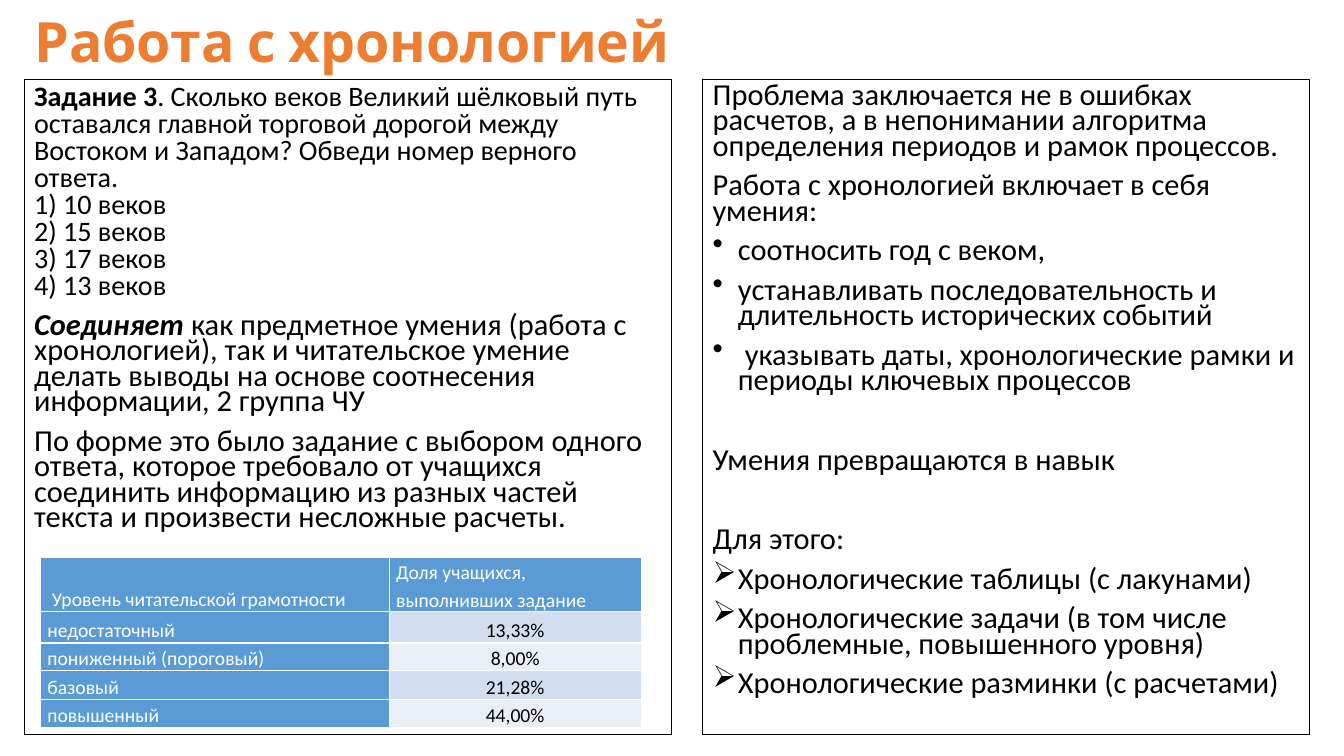
from lxml.etree import SubElement
from pptx import Presentation
from pptx.dml.color import RGBColor
from pptx.enum.text import MSO_ANCHOR, MSO_AUTO_SIZE, PP_ALIGN
from pptx.oxml.ns import qn
from pptx.util import Inches, Pt


def style(font, size, color="000000", name="Calibri", bold=False):
    font.name, font.size, font.bold = name, Pt(size), bold
    font.color.rgb = RGBColor.from_string(color)


def panel(slide, left, width, items):
    """Add a framed column; an item is (text, lead, mark, size, spacing, before)."""
    box = slide.shapes.add_textbox(Inches(left), Inches(0.79), Inches(width), Inches(6.5))
    box.line.color.rgb = RGBColor.from_string("000000")
    box.line.width = Pt(1)
    frame = box.text_frame
    frame.word_wrap = True
    for i, (text, lead, mark, size, spacing, before) in enumerate(items):
        para = frame.add_paragraph() if i else frame.paragraphs[0]
        para.line_spacing, para.space_before = spacing, Pt(before)
        style(para.font, size)
        if lead:
            run = para.add_run()
            run.text = lead
            run.font.bold = True
            run.font.italic = lead == "Соединяет"
        para.add_run().text = text
        if mark:
            props = para._p.get_or_add_pPr()
            props.set("marL", str(Inches(0.25)))
            props.set("indent", str(-Inches(0.25)))
            # The bullet must precede the default run properties
            bullet = SubElement(props, qn("a:buChar"), char=mark)
            props.find(qn("a:defRPr")).addprevious(bullet)


deck = Presentation()
deck.slide_width, deck.slide_height = Inches(13.33), Inches(7.5)
slide = deck.slides.add_slide(deck.slide_layouts[5])

title = slide.shapes.title
title.left, title.top = Inches(0.24), Inches(0.21)
title.width, title.height = Inches(12.17), Inches(0.47)
frame = title.text_frame
frame.text = "Работа с хронологией"
frame.auto_size = MSO_AUTO_SIZE.NONE
frame.vertical_anchor = MSO_ANCHOR.MIDDLE
head = frame.paragraphs[0]
head.alignment, head.line_spacing = PP_ALIGN.LEFT, 0.9
style(head.font, 39.6, "ED7D31", "Cabin", True)

# Size, line spacing and space before
TASK = (20.1, 0.8, 0)
BODY = (21.7, 0.7, 10)
APART = (21.7, 0.7, 38.5)

panel(slide, 0.24, 6.42, [
    (". Сколько веков Великий шёлковый путь оставался главной торговой дорогой "
     "между Востоком и Западом? Обведи номер верного ответа.", "Задание 3", "", *TASK),
    *[(f"{n}) {count} веков", "", "", *TASK)
      for n, count in enumerate((10, 15, 17, 13), 1)],
    (" как предметное умения (работа с хронологией), так и читательское умение "
     "делать выводы на основе соотнесения информации, 2 группа ЧУ",
     "Соединяет", "", *BODY),
    ("По форме это было задание с выбором одного ответа, которое требовало от "
     "учащихся соединить информацию из разных частей текста и произвести "
     "несложные расчеты.", "", "", *BODY),
])

panel(slide, 6.97, 6.02, [
    ("Проблема заключается не в ошибках расчетов, а в непонимании алгоритма "
     "определения периодов и рамок процессов.", "", "", *BODY),
    ("Работа с хронологией включает в себя умения:", "", "", *BODY),
    ("соотносить год с веком,", "", "•", *BODY),
    ("устанавливать последовательность и длительность исторических событий",
     "", "•", *BODY),
    (" указывать даты, хронологические рамки и периоды ключевых процессов",
     "", "•", *BODY),
    ("Умения превращаются в навык", "", "", *APART),
    ("Для этого:", "", "", *APART),
    ("Хронологические таблицы (с лакунами)", "", "➢", *BODY),
    ("Хронологические задачи (в том числе проблемные, повышенного уровня)",
     "", "➢", *BODY),
    ("Хронологические разминки (с расчетами)", "", "➢", *BODY),
])

rows = [
    (" Уровень читательской грамотности", "Доля учащихся, выполнивших задание"),
    ("недостаточный", "13,33%"),
    ("пониженный (пороговый)", "8,00%"),
    ("базовый", "21,28%"),
    ("повышенный", "44,00%"),
]
table = slide.shapes.add_table(
    len(rows), 2, Inches(0.4), Inches(5.53), Inches(5.96), Inches(1.69)).table
for col, width in zip(table.columns, (3.46, 2.5)):
    col.width = Inches(width)
for row, height in zip(table.rows, (0.54, 0.31, 0.27, 0.29, 0.28)):
    row.height = Inches(height)
for r, texts in enumerate(rows):
    for c, text in enumerate(texts):
        cell = table.cell(r, c)
        value = r > 0 and c > 0
        band = "D2DEEF" if r % 2 else "EAEFF7"
        cell.fill.solid()
        cell.fill.fore_color.rgb = RGBColor.from_string(band if value else "5B9BD5")
        cell.margin_left = cell.margin_right = Inches(0.07)
        cell.margin_top = cell.margin_bottom = 0
        cell.vertical_anchor = MSO_ANCHOR.BOTTOM
        cell.text = text
        para = cell.text_frame.paragraphs[0]
        para.line_spacing, para.space_after = 1.15, Pt(10)
        para.alignment = PP_ALIGN.CENTER if value else PP_ALIGN.LEFT
        style(para.font, 14, "000000" if value else "FFFFFF")

deck.save("out.pptx")
